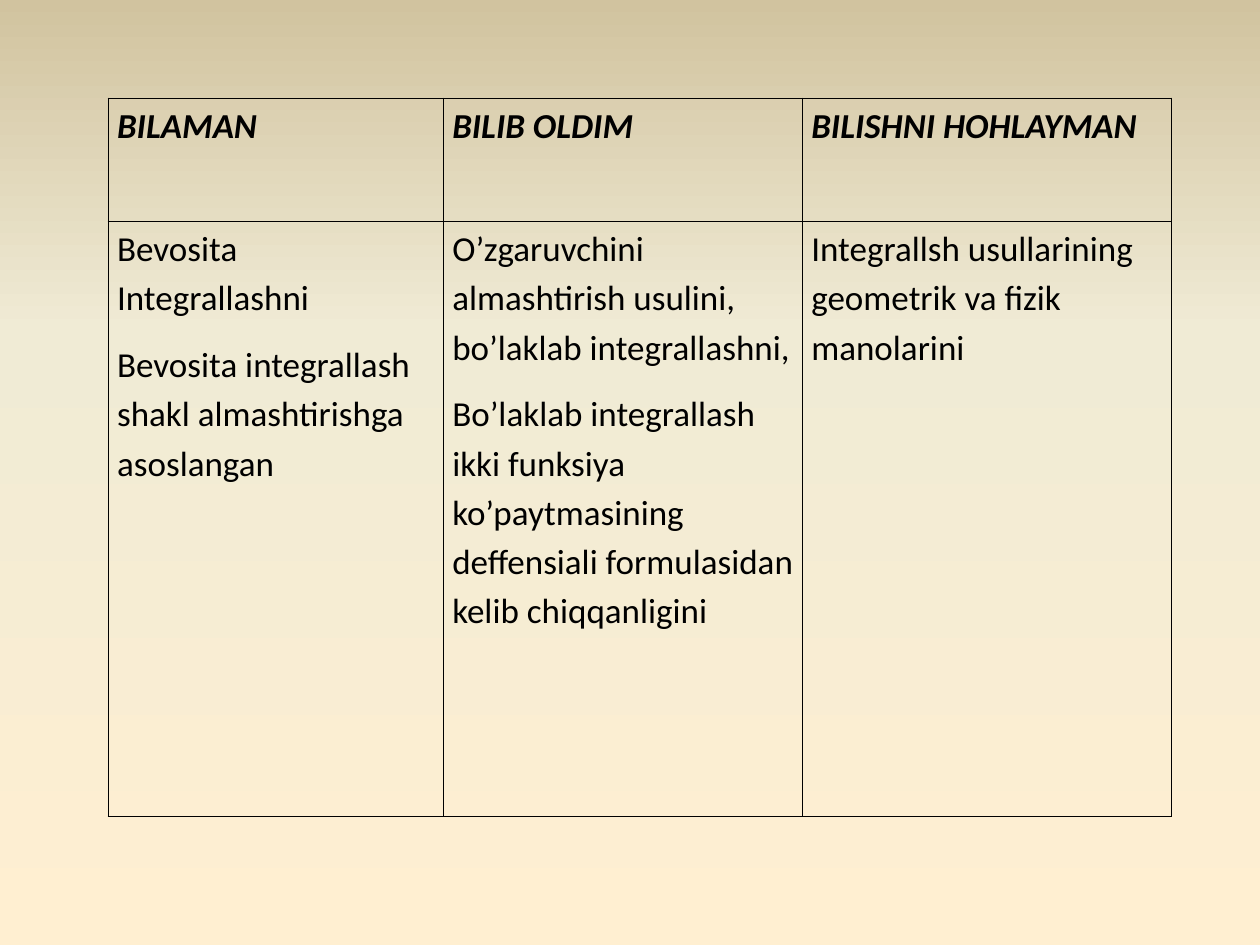
from dataclasses import dataclass

from pptx import Presentation
from pptx.dml.color import RGBColor
from pptx.oxml import parse_xml
from pptx.oxml.ns import nsdecls, qn
from pptx.util import Inches, Pt

BLACK = RGBColor(0x00, 0x00, 0x00)
CREAM = RGBColor(0xFF, 0xEF, 0xD1)
IVORY = RGBColor(0xF0, 0xEB, 0xD5)
SAND = RGBColor(0xD1, 0xC3, 0x9F)
FONT = "Calibri"


@dataclass
class Column:
    width: float
    title: str
    notes: list[str]


COLUMNS = [
    Column(2.66, "BILAMAN", [
        "Bevosita Integrallashni",
        "Bevosita integrallash shakl almashtirishga asoslangan",
    ]),
    Column(2.85, "BILIB OLDIM", [
        "O’zgaruvchini almashtirish usulini, bo’laklab integrallashni,",
        "Bo’laklab integrallash ikki funksiya ko’paytmasining deffensiali "
        "formulasidan kelib chiqqanligini",
    ]),
    Column(2.93, "BILISHNI HOHLAYMAN", [
        "Integrallsh usullarining geometrik va fizik manolarini",
    ]),
]
ROW_HEIGHTS = [0.98, 4.72]


def set_background(s) -> None:
    """Vertical gradient, sand at the top and cream at the bottom."""
    fill = s.background.fill
    fill.gradient()
    fill.gradient_angle = 90
    stops = next(s.element.iter(qn("a:gsLst")))
    for stop in list(stops):
        stops.remove(stop)
    for percent, color in ((0, CREAM), (65, IVORY), (100, SAND)):
        stops.append(parse_xml(
            f'<a:gs {nsdecls("a")} pos="{percent * 1000}">'
            f'<a:srgbClr val="{color}"/></a:gs>'))


def add_text(tf, paragraphs: list[str], *, size: float = 20,
             color: RGBColor = BLACK, bold: bool = False,
             italic: bool = False) -> None:
    for i, text in enumerate(paragraphs):
        p = tf.add_paragraph() if i else tf.paragraphs[0]
        p.line_spacing = 1.15
        p.space_after = Pt(10)
        r = p.add_run()
        r.text = text
        r.font.name = FONT
        r.font.size = Pt(size)
        r.font.color.rgb = color
        r.font.bold = bold
        r.font.italic = italic


def format_cell(cell) -> None:
    cell.margin_left = cell.margin_right = Inches(0.07)
    cell.margin_top = cell.margin_bottom = 0
    cell.fill.background()
    # Borders come before the fill in the cell properties
    tc_pr = cell._tc.get_or_add_tcPr()
    for i, side in enumerate("LRTB"):
        tc_pr.insert(i, parse_xml(
            f'<a:ln{side} {nsdecls("a")} w="{Pt(1)}"><a:solidFill>'
            f'<a:srgbClr val="{BLACK}"/></a:solidFill></a:ln{side}>'))


def add_knowledge_table(s, columns: list[Column]) -> None:
    width = sum(column.width for column in columns)
    table = s.shapes.add_table(
        len(ROW_HEIGHTS), len(columns), Inches(0.86), Inches(0.78),
        Inches(width), Inches(sum(ROW_HEIGHTS))).table
    table.first_row = table.horz_banding = False
    for row, height in zip(table.rows, ROW_HEIGHTS):
        row.height = Inches(height)
    for i, column in enumerate(columns):
        table.columns[i].width = Inches(column.width)
        header, body = table.cell(0, i), table.cell(1, i)
        format_cell(header)
        format_cell(body)
        add_text(header.text_frame, [column.title], bold=True, italic=True)
        add_text(body.text_frame, column.notes)


def main() -> None:
    prs = Presentation()
    prs.slide_width, prs.slide_height = Inches(10), Inches(7.5)
    s = prs.slides.add_slide(prs.slide_layouts[6])
    set_background(s)
    add_knowledge_table(s, COLUMNS)
    prs.save("out.pptx")


if __name__ == "__main__":
    main()
